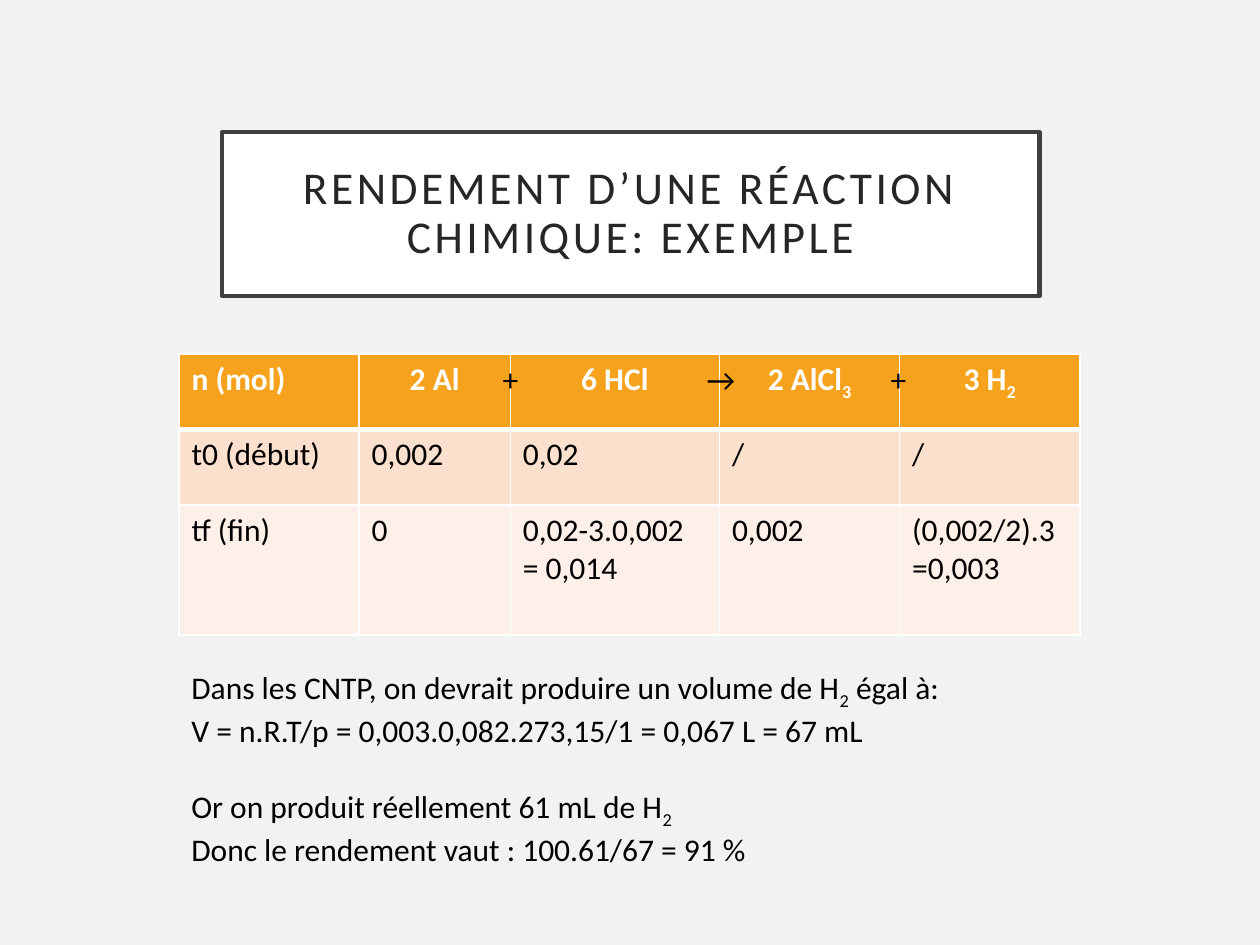
from dataclasses import dataclass
from itertools import accumulate

from lxml import etree
from pptx import Presentation, util as u
from pptx.dml.color import RGBColor
from pptx.enum import text
from pptx.oxml import ns

COLORS = {
    "page": "F2F2F2", "white": "FFFFFF", "frame": "404040", "title": "262626",
    "ink": "000000", "header": "F6A21D", "start": "FBE0CD", "end": "FDF0E8",
}
FONT = "Calibri"
LEFT, TOP = 1.42, 2.81
COLUMNS = [1.43, 1.2, 1.66, 1.43, 1.43]
BORDERS = [LEFT + offset for offset in accumulate(COLUMNS)]
WIDTH = sum(COLUMNS)


@dataclass
class Row:
    height: float
    fill: str
    cells: list[str]
    header: bool = False


@dataclass
class Sign:
    """A reaction sign lying over the right border of a column."""
    symbol: str
    column: int
    shift: float


ROWS = [
    Row(0.6, "header", ["n (mol)", "2 Al", "6 HCl", "2 AlCl_3_", "3 H_2_"], header=True),
    Row(0.6, "start", ["t0 (début)", "0,002", "0,02", "/", "/"]),
    Row(1.03, "end", ["tf (fin)", "0", "0,02-3.0,002\n= 0,014", "0,002",
                      "(0,002/2).3\n=0,003"]),
]
SIGNS = [Sign("+", 1, 0.16), Sign("→", 2, 0.2), Sign("+", 3, 0.17)]
CONCLUSION = [
    "Dans les CNTP, on devrait produire un volume de H_2_ égal à:",
    "V = n.R.T/p = 0,003.0,082.273,15/1 = 0,067 L = 67 mL",
    "Or on produit réellement 61 mL de H_2_",
    "Donc le rendement vaut : 100.61/67 = 91 %",
]


def rgb(name: str) -> RGBColor:
    return RGBColor.from_string(COLORS[name])


def write(frame, content: str, *, size=18, color="ink", bold=False,
          align=text.PP_ALIGN.LEFT, spacing=None) -> None:
    """Fill a text frame, one paragraph a line; _x_ marks a subscript."""
    for index, line in enumerate(content.split("\n")):
        para = frame.paragraphs[0] if index == 0 else frame.add_paragraph()
        para.alignment = align
        for part, words in enumerate(line.split("_")):
            if not words:
                continue
            span = para.add_run()
            span.text = words
            span.font.name, span.font.size, span.font.bold = FONT, u.Pt(size), bold
            span.font.color.rgb = rgb(color)
            properties = span._r.get_or_add_rPr()
            if part % 2:
                properties.set("baseline", "-25000")
            if spacing:
                properties.set("spc", str(spacing * 100))


def add_text(page, left: float, top: float, width: float, height: float, content: str):
    box = page.shapes.add_textbox(*map(u.Inches, (left, top, width, height)))
    box.text_frame.word_wrap = True
    box.text_frame.auto_size = text.MSO_AUTO_SIZE.SHAPE_TO_FIT_TEXT
    write(box.text_frame, content)
    return box


def set_borders(cell, widths: dict[str, float]) -> None:
    properties = cell._tc.get_or_add_tcPr()
    for position, (side, width) in enumerate(widths.items()):
        line = etree.Element(ns.qn(f"a:ln{side}"), w=str(u.Pt(width)))
        fill = etree.SubElement(line, ns.qn("a:solidFill"))
        etree.SubElement(fill, ns.qn("a:srgbClr"), val=COLORS["white"])
        properties.insert(position, line)


def add_title(page) -> None:
    title = page.shapes.title
    title.left, title.top, title.width, title.height = map(
        u.Inches, (1.76, 1.05, 6.49, 1.3))
    title.fill.solid()
    title.fill.fore_color.rgb = rgb("white")
    title.line.color.rgb = rgb("frame")
    title.line.width = u.Pt(2.5)
    frame = title.text_frame
    frame.word_wrap = True
    frame.auto_size = text.MSO_AUTO_SIZE.NONE
    frame.vertical_anchor = text.MSO_ANCHOR.MIDDLE
    frame.margin_left = frame.margin_right = u.Inches(0.2)
    frame.margin_top = frame.margin_bottom = u.Inches(0.2)
    write(frame, "RENDEMENT D’UNE RÉACTION CHIMIQUE: EXEMPLE", size=26,
          color="title", align=text.PP_ALIGN.CENTER, spacing=2)
    frame.paragraphs[0].line_spacing = 0.9


def add_amounts(page) -> None:
    height = sum(row.height for row in ROWS)
    table = page.shapes.add_table(
        len(ROWS), len(COLUMNS), *map(u.Inches, (LEFT, TOP, WIDTH, height))).table
    table.horz_banding = False
    table.first_row = False
    for column, width in zip(table.columns, COLUMNS):
        column.width = u.Inches(width)
    for index, row in enumerate(ROWS):
        table.rows[index].height = u.Inches(row.height)
        top = 3 if index and ROWS[index - 1].header else 1
        for number, content in enumerate(row.cells):
            cell = table.cell(index, number)
            cell.fill.solid()
            cell.fill.fore_color.rgb = rgb(row.fill)
            centred = row.header and number > 0
            write(cell.text_frame, content, bold=row.header,
                  color="white" if row.header else "ink",
                  align=text.PP_ALIGN.CENTER if centred else text.PP_ALIGN.LEFT)
            set_borders(cell, {"L": 1, "R": 1, "T": top, "B": 3 if row.header else 1})


def main() -> None:
    deck = Presentation()
    deck.slide_width, deck.slide_height = u.Inches(10), u.Inches(7.5)
    page = deck.slides.add_slide(deck.slide_layouts[5])
    page.background.fill.solid()
    page.background.fill.fore_color.rgb = rgb("page")
    add_title(page)
    add_amounts(page)
    for sign in SIGNS:
        add_text(page, BORDERS[sign.column] - sign.shift, TOP, 0.47, 0.4, sign.symbol)
    conclusion = add_text(page, LEFT, 5.25, WIDTH, 1.62, "\n".join(CONCLUSION))
    conclusion.text_frame.paragraphs[2].space_before = u.Pt(22)
    deck.save("out.pptx")


if __name__ == "__main__":
    main()
